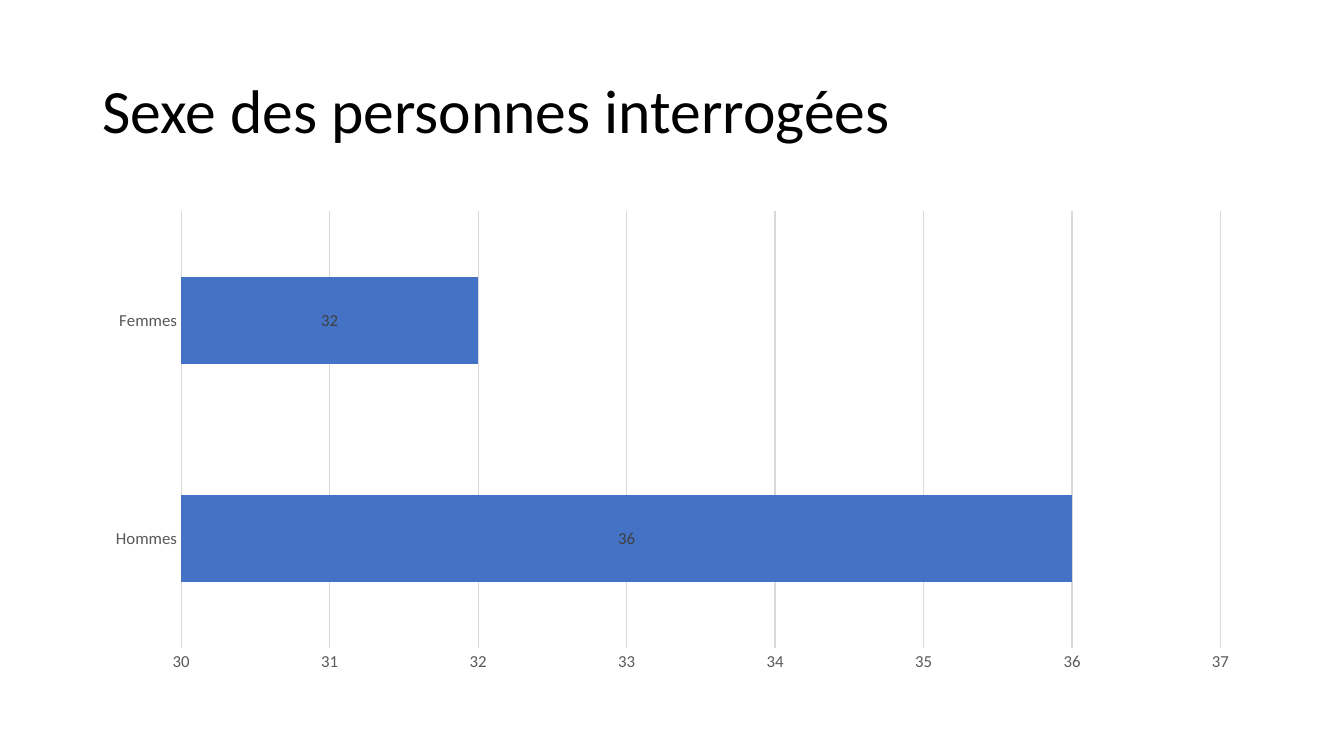
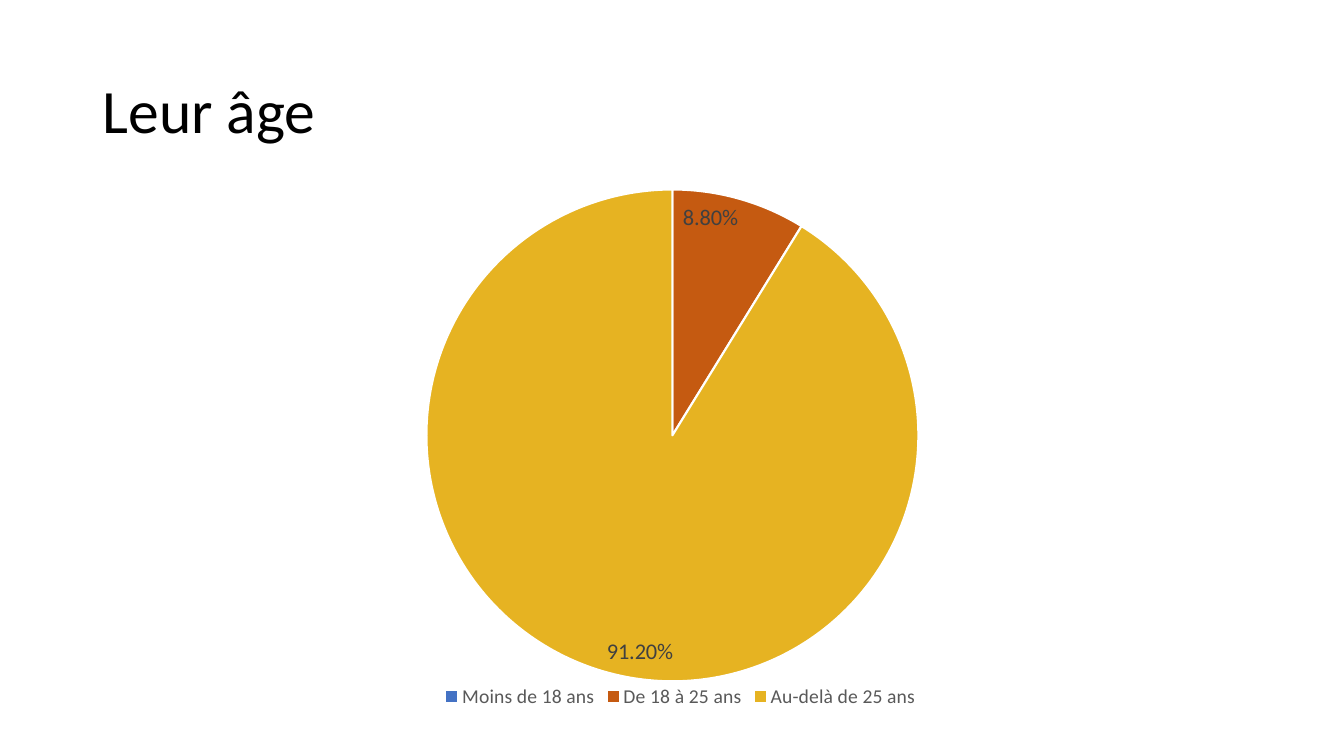
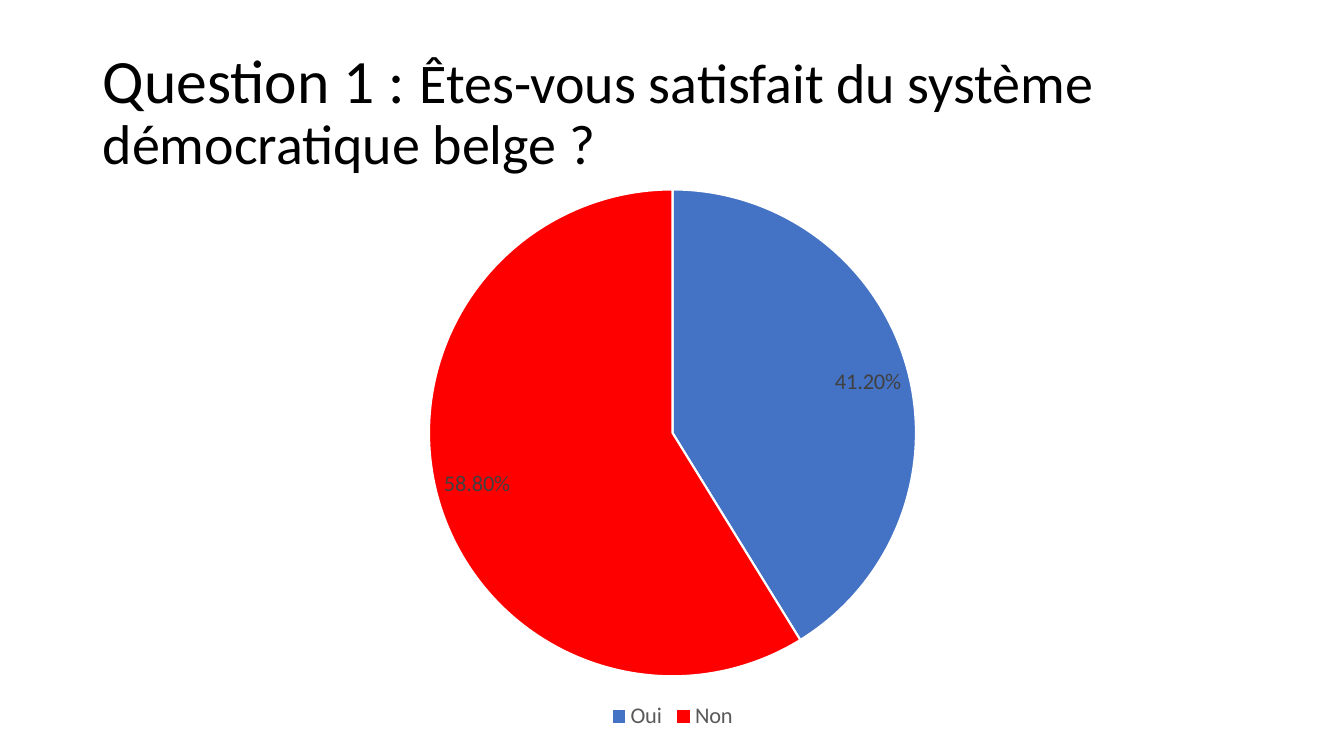
from dataclasses import dataclass
from typing import Optional

from lxml import etree
from pptx import Presentation
from pptx import util as u
from pptx.chart.chart import Chart
from pptx.chart.data import CategoryChartData
from pptx.dml.color import RGBColor
from pptx.enum import chart as ch
from pptx.enum import text
from pptx.oxml.ns import qn
from pptx.slide import Slide

FONT = "Calibri"
BLACK, WHITE = "000000", "FFFFFF"
AXIS_GREY, LABEL_GREY, GRID_GREY = "595959", "404040", "D9D9D9"
BLUE, ORANGE, GOLD, RED = "4472C4", "C55A11", "E6B322", "FF0000"
LEFT, WIDTH = 0.92, 11.5


@dataclass(frozen=True)
class TitlePhrase:
    wording: str
    size: int = 44


@dataclass(frozen=True)
class Survey:
    title: tuple[TitlePhrase, ...]
    answers: dict[str, Optional[float]]
    top: float
    height: float


@dataclass(frozen=True)
class PieSurvey(Survey):
    colours: tuple[str, ...]
    legend_size: int
    pie_top: float
    diameter: float
    legend_corner: Optional[tuple[float, float]] = None


def colour(value: str) -> RGBColor:
    return RGBColor.from_string(value)


def style_font(font, size: int, value: str) -> None:
    font.name = FONT
    font.size = u.Pt(size)
    font.color.rgb = colour(value)


def style_line(line, value: str, width: float) -> None:
    line.color.rgb = colour(value)
    line.width = u.Pt(width)


def add_title(slide: Slide, phrases: tuple[TitlePhrase, ...]) -> None:
    box = slide.shapes.add_textbox(
        u.Inches(LEFT), u.Inches(0.4), u.Inches(WIDTH), u.Inches(1.45)
    )
    frame = box.text_frame
    frame.word_wrap = True
    frame.vertical_anchor = text.MSO_ANCHOR.MIDDLE
    heading = frame.paragraphs[0]
    heading.line_spacing = 0.9
    style_font(heading.font, phrases[0].size, BLACK)
    for phrase in phrases:
        run = heading.add_run()
        run.text = phrase.wording
        if phrase.size != phrases[0].size:
            run.font.size = u.Pt(phrase.size)


def add_survey_chart(slide: Slide, survey: Survey, kind: ch.XL_CHART_TYPE) -> Chart:
    results = CategoryChartData()
    results.categories = list(survey.answers)
    results.add_series("Series 1", list(survey.answers.values()))
    chart = slide.shapes.add_chart(
        kind,
        u.Inches(LEFT),
        u.Inches(survey.top),
        u.Inches(WIDTH),
        u.Inches(survey.height),
        results,
    ).chart
    chart.has_title = False
    chart.has_legend = False
    style_font(chart.font, 10, BLACK)
    return chart


def add_labels(chart: Chart, size: int, position: ch.XL_LABEL_POSITION, number_format: str) -> None:
    plot = chart.plots[0]
    plot.has_data_labels = True
    labels = plot.data_labels
    labels.show_value = True
    labels.show_percentage = False
    labels.number_format = number_format
    labels.number_format_is_linked = False
    labels.position = position
    style_font(labels.font, size, LABEL_GREY)


def manual_layout(inner: bool, **fractions: float):
    layout = etree.Element(qn("c:layout"))
    manual = etree.SubElement(layout, qn("c:manualLayout"))
    if inner:
        etree.SubElement(manual, qn("c:layoutTarget"), val="inner")
    for side in ("xMode", "yMode"):
        etree.SubElement(manual, qn(f"c:{side}"), val="edge")
    for side, fraction in fractions.items():
        etree.SubElement(manual, qn(f"c:{side}"), val=f"{fraction:.4f}")
    return layout


def add_bar_slide(slide: Slide, survey: Survey) -> None:
    add_title(slide, survey.title)
    chart = add_survey_chart(slide, survey, ch.XL_CHART_TYPE.BAR_STACKED)
    plot = chart.plots[0]
    plot.vary_by_categories = False
    plot.gap_width = 150
    plot.overlap = 100
    fill = plot.series[0].format.fill
    fill.solid()
    fill.fore_color.rgb = colour(BLUE)
    add_labels(chart, 12, ch.XL_LABEL_POSITION.CENTER, "General")

    groups, counts = chart.category_axis, chart.value_axis
    for axis in (groups, counts):
        axis.major_tick_mark = ch.XL_TICK_MARK.NONE
        axis.minor_tick_mark = ch.XL_TICK_MARK.NONE
        style_font(axis.tick_labels.font, 12, AXIS_GREY)
    style_line(groups.format.line, GRID_GREY, 0.75)
    counts.format.line.fill.background()
    counts.has_major_gridlines = True
    style_line(counts.major_gridlines.format.line, GRID_GREY, 0.75)
    counts.minimum_scale, counts.maximum_scale, counts.major_unit = 30, 37, 1


def add_pie_slide(slide: Slide, survey: PieSurvey) -> None:
    add_title(slide, survey.title)
    chart = add_survey_chart(slide, survey, ch.XL_CHART_TYPE.PIE)
    plot = chart.plots[0]
    plot.vary_by_categories = True
    for index, value in enumerate(survey.colours):
        slice_format = plot.series[0].points[index].format
        slice_format.fill.solid()
        slice_format.fill.fore_color.rgb = colour(value)
        style_line(slice_format.line, WHITE, 1.5)
    add_labels(chart, 16, ch.XL_LABEL_POSITION.INSIDE_END, "0.00%")

    chart.has_legend = True
    chart.legend.position = ch.XL_LEGEND_POSITION.BOTTOM
    chart.legend.include_in_layout = False
    style_font(chart.legend.font, survey.legend_size, AXIS_GREY)

    root = chart.element
    plot_area = root.find(f".//{qn('c:plotArea')}")
    for automatic in plot_area.findall(qn("c:layout")):
        plot_area.remove(automatic)
    plot_area.insert(
        0,
        manual_layout(
            True,
            x=(1 - survey.diameter / WIDTH) / 2,
            y=(survey.pie_top - survey.top) / survey.height,
            w=survey.diameter / WIDTH,
            h=survey.diameter / survey.height,
        ),
    )
    if survey.legend_corner:
        x, y = survey.legend_corner
        legend = root.find(f".//{qn('c:legend')}")
        for automatic in legend.findall(qn("c:layout")):
            legend.remove(automatic)
        legend.find(qn("c:legendPos")).addnext(
            manual_layout(False, x=(x - LEFT) / WIDTH, y=(y - survey.top) / survey.height)
        )


GENDER = Survey(
    title=(TitlePhrase("Sexe des personnes interrogées"),),
    answers={"Hommes": 36, "Femmes": 32},
    top=2,
    height=4.76,
)
AGE = PieSurvey(
    title=(TitlePhrase("Leur âge"),),
    answers={"Moins de 18 ans": None, "De 18 à 25 ans": 0.088, "Au-delà de 25 ans": 0.912},
    top=1.45,
    height=5.86,
    colours=(BLUE, ORANGE, GOLD),
    legend_size=14,
    pie_top=1.88,
    diameter=4.88,
    legend_corner=(4.36, 6.75),
)
SATISFACTION = PieSurvey(
    title=(
        TitlePhrase("Question 1 : "),
        TitlePhrase("Êtes-vous satisfait du système démocratique belge ?", 40),
    ),
    answers={"Oui": 0.412, "Non": 0.588},
    top=1.74,
    height=5.55,
    colours=(BLUE, RED),
    legend_size=16,
    pie_top=1.88,
    diameter=4.83,
)


def main() -> None:
    deck = Presentation()
    deck.slide_width, deck.slide_height = u.Inches(13.33), u.Inches(7.5)
    blank = deck.slide_layouts[6]
    add_bar_slide(deck.slides.add_slide(blank), GENDER)
    for survey in (AGE, SATISFACTION):
        add_pie_slide(deck.slides.add_slide(blank), survey)
    deck.save("out.pptx")


if __name__ == "__main__":
    main()
